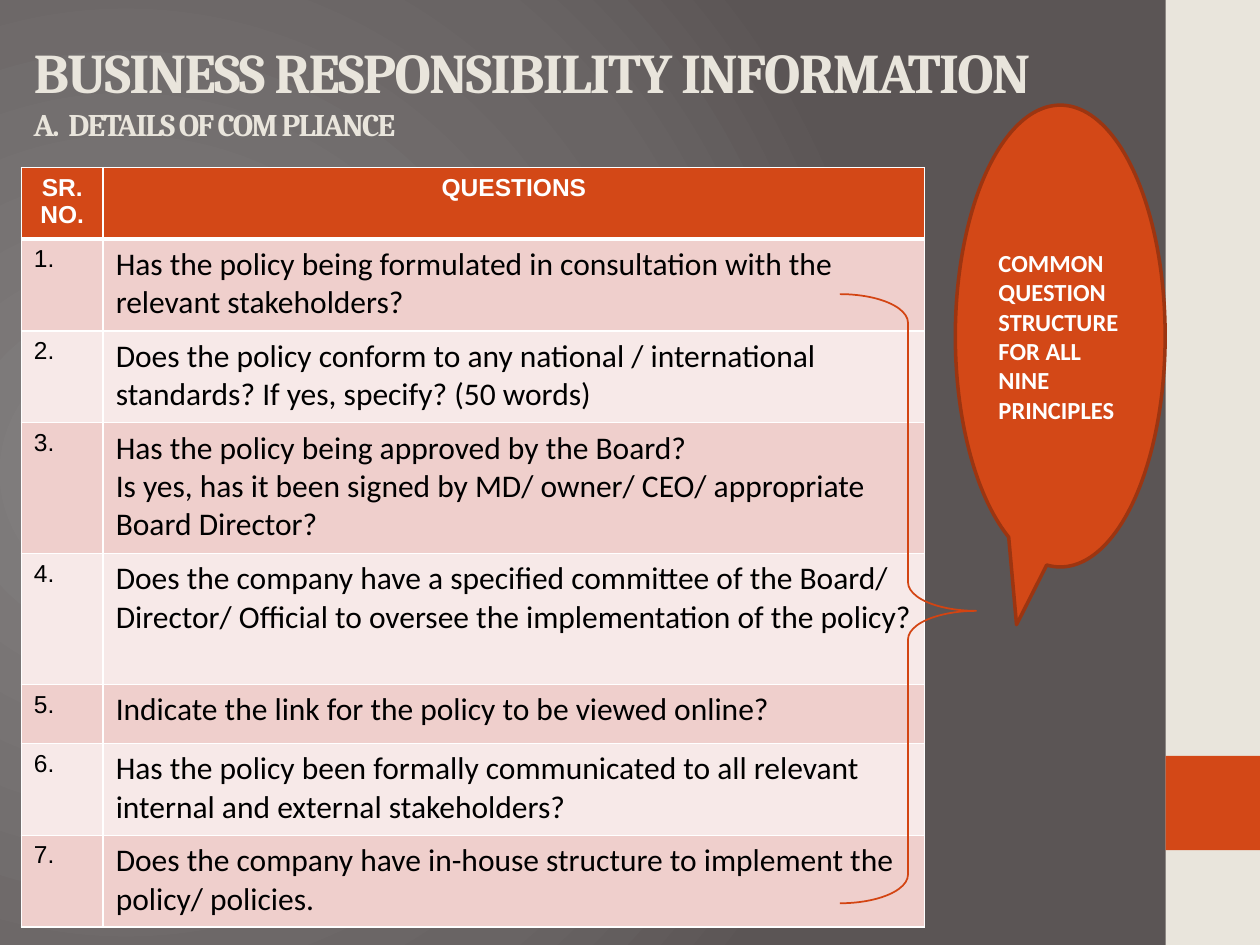
from lxml import etree
from pptx import Presentation
from pptx.dml.color import RGBColor
from pptx.enum.shapes import MSO_SHAPE
from pptx.enum.text import MSO_ANCHOR, PP_ALIGN
from pptx.oxml.ns import qn
from pptx.util import Cm, Pt

RECT = MSO_SHAPE.RECTANGLE
BRACE = MSO_SHAPE.RIGHT_BRACE
CALLOUT = MSO_SHAPE.OVAL_CALLOUT
TOP, MIDDLE = MSO_ANCHOR.TOP, MSO_ANCHOR.MIDDLE
LEFT, CENTER = PP_ALIGN.LEFT, PP_ALIGN.CENTER

CREAM, ORANGE, WHITE, BLACK = "E9E5DC", "D34817", "FFFFFF", "000000"
BANDS = "EFCFCC", "F7E9E8"
A_NS = "http://schemas.openxmlformats.org/drawingml/2006/main"

COLS = 1.65, 16.56
HEAD = 1.42
# Row height, then the paragraphs of the question
ROWS = [
    (1.85, ["Has the policy being formulated in consultation with the relevant stakeholders?"]),
    (1.85, ["Does the policy conform to any national / international standards? "
            "If yes, specify? (50 words)"]),
    (2.64, ["Has the policy being approved by the Board?",
            "Is yes, has it been signed by MD/ owner/ CEO/ appropriate Board Director?"]),
    (2.64, ["Does the company have a specified committee of the Board/ Director/ Official "
            "to oversee the implementation of the policy?"]),
    (1.19, ["Indicate the link for the policy to be viewed online?"]),
    (1.85, ["Has the policy been formally communicated to all relevant internal "
            "and external stakeholders?"]),
    (1.85, ["Does the company have in-house structure to implement the policy/ policies."]),
]


def rgb(code):
    return RGBColor.from_string(code)


def paint(slide):
    """Give the slide a radial gradient background."""
    slide.background.fill.solid()
    props = slide.element.find(".//" + qn("p:bgPr"))
    stops = "".join(
        f'<a:gs pos="{pos}000"><a:srgbClr val="{code}"/></a:gs>'
        for pos, code in ((0, "838080"), (75, "696464"), (100, "5B5555")))
    grad = etree.fromstring(
        f'<a:gradFill xmlns:a="{A_NS}" rotWithShape="1"><a:gsLst>{stops}</a:gsLst>'
        '<a:path path="circle"><a:fillToRect l="20000" t="50000" r="100000" b="50000"/>'
        '</a:path></a:gradFill>')
    props.replace(props[0], grad)


def add_run(para, text, size, font, color, bold=False):
    run = para.add_run()
    run.text = text
    run.font.size = Pt(size)
    run.font.name = font
    run.font.bold = bold
    run.font.color.rgb = rgb(color)
    return run


def write(frame, lines, size, font, color, bold=False, align=LEFT):
    for i, line in enumerate(lines):
        para = frame.add_paragraph() if i else frame.paragraphs[0]
        para.alignment = align
        add_run(para, line, size, font, color, bold)


def add_shape(slide, kind, box, fill=None, line=None, width=1):
    shape = slide.shapes.add_shape(kind, *map(Cm, box))
    shape.shadow.inherit = False
    if fill:
        shape.fill.solid()
        shape.fill.fore_color.rgb = rgb(fill)
    else:
        shape.fill.background()
    if line:
        shape.line.color.rgb = rgb(line)
        shape.line.width = Pt(width)
    else:
        shape.line.fill.background()
    return shape


def add_title(slide):
    frame = slide.shapes.add_textbox(Cm(0.43), Cm(0.76), Cm(22.86), Cm(2.2)).text_frame
    frame.word_wrap = True
    frame.vertical_anchor = TOP
    frame.margin_top = 0
    lines = ("BUSINESS RESPONSIBILITY INFORMATION", 32), ("A.  DETAILS OF COM PLIANCE", 18)
    for i, (text, size) in enumerate(lines):
        para = frame.add_paragraph() if i else frame.paragraphs[0]
        run = add_run(para, text, size, "Cambria", CREAM, True)
        run.font._element.set("spc", "-100")


def style(cell, fill, top=1, bottom=1):
    """Set white borders, widths in points, and then the fill."""
    props = cell._tc.get_or_add_tcPr()
    for side, width in zip("LRTB", (1, 1, top, bottom)):
        line = etree.SubElement(props, qn(f"a:ln{side}"), w=str(Pt(width)))
        solid = etree.SubElement(line, qn("a:solidFill"))
        etree.SubElement(solid, qn("a:srgbClr"), val=WHITE)
    cell.fill.solid()
    cell.fill.fore_color.rgb = rgb(fill)


def add_questions(slide):
    heights = [HEAD] + [height for height, _ in ROWS]
    table = slide.shapes.add_table(
        len(heights), len(COLS), Cm(0.43), Cm(3.38), Cm(sum(COLS)), Cm(sum(heights))).table
    for col, width in zip(table.columns, COLS):
        col.width = Cm(width)
    for row, height in zip(table.rows, heights):
        row.height = Cm(height)
    for i, text in enumerate(("SR. NO.", "QUESTIONS")):
        cell = table.cell(0, i)
        style(cell, ORANGE, bottom=3)
        write(cell.text_frame, [text], 14, "Arial", WHITE, True, CENTER)
    for i, (_, lines) in enumerate(ROWS, 1):
        number, question = table.cell(i, 0), table.cell(i, 1)
        for cell in (number, question):
            style(cell, BANDS[(i - 1) % 2], top=3 if i == 1 else 1)
        write(number.text_frame, [f"{i}."], 14, "Arial", BLACK)
        write(question.text_frame, lines, 18, "Calibri", BLACK)


def add_callout(slide):
    brace = add_shape(slide, BRACE, (16.93, 5.93, 2.75, 12.28), line="D34412")
    brace.adjustments[0] = 0.21
    brace.adjustments[1] = 0.52
    bubble = add_shape(slide, CALLOUT, (19.26, 2.12, 4.23, 9.31), ORANGE, "9C3511", 2)
    frame = bubble.text_frame
    frame.word_wrap = True
    frame.vertical_anchor = MIDDLE
    write(frame, ["COMMON QUESTION STRUCTURE FOR ALL NINE PRINCIPLES"],
          14, "Calibri", WHITE, True)


def main():
    deck = Presentation()
    deck.slide_width, deck.slide_height = Cm(25.4), Cm(19.05)
    slide = deck.slides.add_slide(deck.slide_layouts[6])
    paint(slide)
    add_shape(slide, RECT, (23.5, 0, 1.9, 19.05), CREAM)
    add_shape(slide, RECT, (23.5, 15.24, 1.9, 1.9), ORANGE)
    add_title(slide)
    add_questions(slide)
    add_callout(slide)
    deck.save("out.pptx")


if __name__ == "__main__":
    main()
